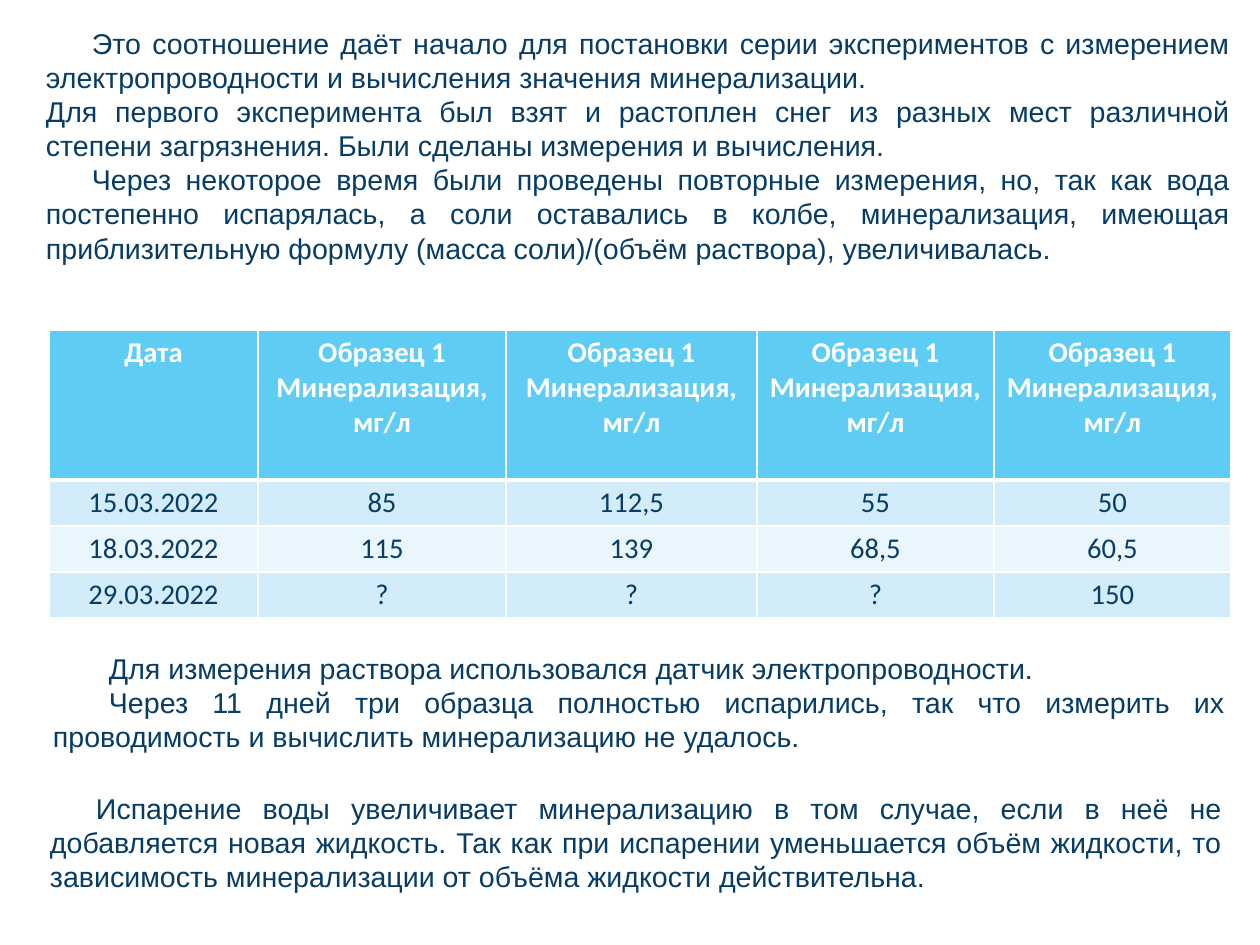
from dataclasses import dataclass

from lxml.etree import SubElement
from pptx import Presentation
from pptx.dml.color import RGBColor
from pptx.enum.text import PP_ALIGN
from pptx.oxml.ns import qn
from pptx.util import Emu, Pt


@dataclass(frozen=True)
class Theme:
    ink: str = "073C65"
    white: str = "FFFFFF"
    header: str = "5ECCF3"
    band_dark: str = "D2ECFA"
    band_light: str = "EAF6FD"
    body_font: str = "Arial"
    table_font: str = "Calibri"
    text_size: float = 18
    line_pitch: float = 21.5
    thin_border: int = 1
    thick_border: int = 3


THEME = Theme()
EMU_PER_PX = 8000
PAGE_SIZE = (1260, 945)

INTRO = [
    ("Это соотношение даёт начало для постановки серии экспериментов с измерением "
     "электропроводности и вычисления значения минерализации.", 46),
    ("Для первого эксперимента был взят и растоплен снег из разных мест различной "
     "степени загрязнения. Были сделаны измерения и вычисления.", 0),
    ("Через некоторое время были проведены повторные измерения, но, так как вода "
     "постепенно испарялась, а соли оставались в колбе, минерализация, имеющая "
     "приблизительную формулу (масса соли)/(объём раствора), увеличивалась.", 46),
]
SENSOR = [
    ("Для измерения раствора использовался датчик электропроводности.", 56),
    ("Через 11 дней три образца полностью испарились, так что измерить их "
     "проводимость и вычислить минерализацию не удалось.", 56),
]
CONCLUSION = [
    ("Испарение воды увеличивает минерализацию в том случае, если в неё не "
     "добавляется новая жидкость. Так как при испарении уменьшается объём жидкости, "
     "то зависимость минерализации от объёма жидкости действительна.", 46),
]

SAMPLE_HEADING = "Образец 1\nМинерализация, мг/л"
MEASUREMENTS = [
    ["Дата"] + [SAMPLE_HEADING] * 4,
    ["15.03.2022", "85", "112,5", "55", "50"],
    ["18.03.2022", "115", "139", "68,5", "60,5"],
    ["29.03.2022", "?", "?", "?", "150"],
]
COLUMN_WIDTHS = [209, 248, 251, 237, 237]
ROW_HEIGHTS = [150, 46, 46, 46]


def px(length):
    return Emu(length * EMU_PER_PX)


def write_paragraph(para, text, *, font, color, align, bold=False, indent=0, pitch=None):
    para.alignment = align
    if indent:
        para._p.get_or_add_pPr().set("indent", str(px(indent)))
    if pitch:
        para.line_spacing = Pt(pitch)
    span = para.add_run()
    span.text = text
    span.font.name = font
    span.font.size = Pt(THEME.text_size)
    span.font.bold = bold
    span.font.color.rgb = RGBColor.from_string(color)


def next_paragraph(frame, index):
    return frame.add_paragraph() if index else frame.paragraphs[0]


def add_prose(page, paragraphs, left, top, width, height):
    frame = page.shapes.add_textbox(px(left), px(top), px(width), px(height)).text_frame
    frame.word_wrap = True
    frame.margin_left = frame.margin_right = px(11)
    frame.margin_top, frame.margin_bottom = px(8), px(6)
    for index, (text, indent) in enumerate(paragraphs):
        write_paragraph(next_paragraph(frame, index), text, font=THEME.body_font,
                        color=THEME.ink, align=PP_ALIGN.JUSTIFY, indent=indent,
                        pitch=THEME.line_pitch)


def add_borders(cell, top, bottom):
    properties = cell._tc.get_or_add_tcPr()
    sides = {"lnL": THEME.thin_border, "lnR": THEME.thin_border, "lnT": top, "lnB": bottom}
    for side, points in sides.items():
        line = SubElement(properties, qn(f"a:{side}"), w=str(Pt(points)))
        fill = SubElement(line, qn("a:solidFill"))
        SubElement(fill, qn("a:srgbClr"), val=THEME.white)


def fill_cell(cell, text, row):
    header = row == 0
    band = THEME.band_dark if row % 2 else THEME.band_light
    add_borders(cell,
                top=THEME.thick_border if row == 1 else THEME.thin_border,
                bottom=THEME.thick_border if header else THEME.thin_border)
    cell.fill.solid()
    cell.fill.fore_color.rgb = RGBColor.from_string(THEME.header if header else band)
    for index, line in enumerate(text.split("\n")):
        write_paragraph(next_paragraph(cell.text_frame, index), line,
                        font=THEME.table_font, bold=header, align=PP_ALIGN.CENTER,
                        color=THEME.white if header else THEME.ink)


def add_measurements(page, left, top):
    table = page.shapes.add_table(
        len(ROW_HEIGHTS), len(COLUMN_WIDTHS), px(left), px(top),
        px(sum(COLUMN_WIDTHS)), px(sum(ROW_HEIGHTS))).table
    for column, width in zip(table.columns, COLUMN_WIDTHS):
        column.width = px(width)
    for row, height in zip(table.rows, ROW_HEIGHTS):
        row.height = px(height)
    for row, values in enumerate(MEASUREMENTS):
        for column, text in enumerate(values):
            fill_cell(table.cell(row, column), text, row)


def main():
    deck = Presentation()
    deck.slide_width, deck.slide_height = map(px, PAGE_SIZE)
    page = deck.slides.add_slide(deck.slide_layouts[6])
    add_prose(page, INTRO, 35, 18, 1206, 235)
    add_prose(page, SENSOR, 42, 643, 1194, 139)
    add_prose(page, CONCLUSION, 39, 783, 1194, 107)
    add_measurements(page, 49, 330)
    deck.save("out.pptx")


if __name__ == "__main__":
    main()
